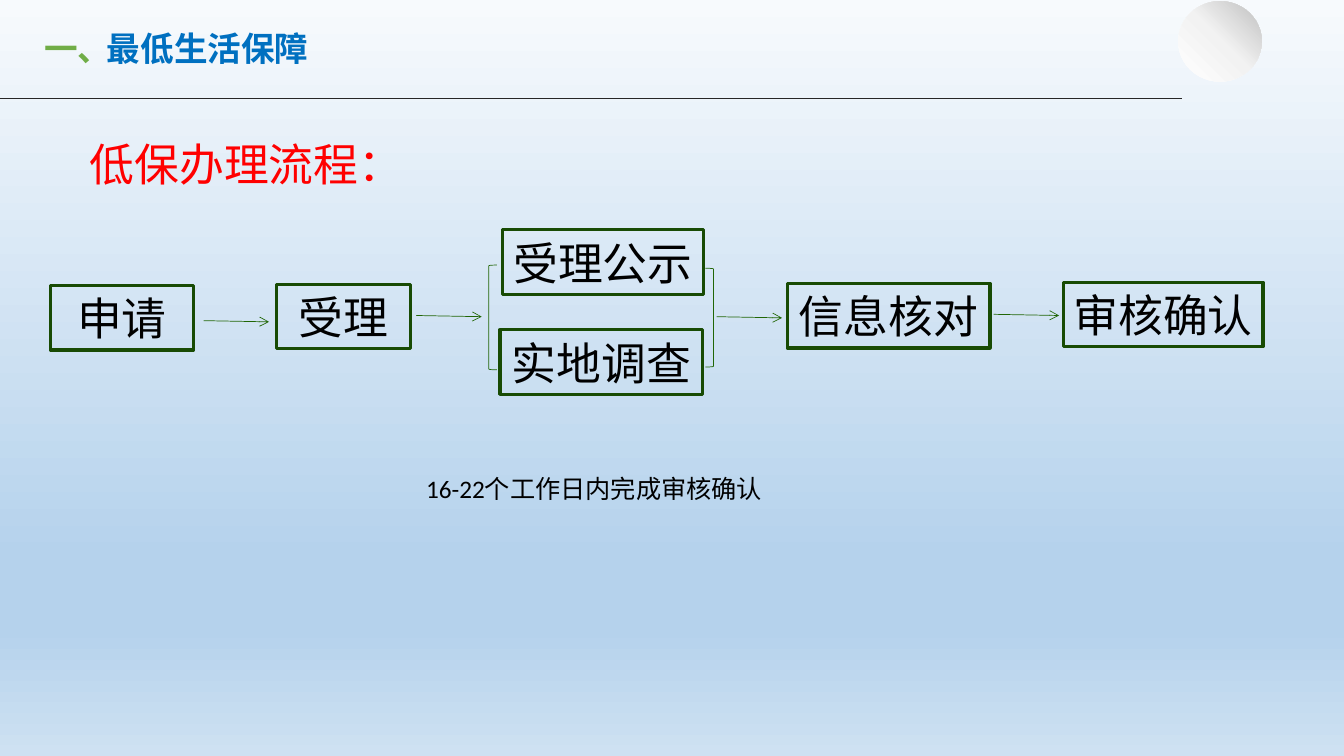
from lxml import etree
from pptx import Presentation
from pptx import util as u
from pptx.dml.color import RGBColor
from pptx.enum import shapes, text
from pptx.oxml import ns

BLUE = RGBColor(0x00, 0x70, 0xC0)
LEAF = RGBColor(0x70, 0xAD, 0x47)
RED = RGBColor(0xFF, 0x00, 0x00)
BLACK = RGBColor(0x00, 0x00, 0x00)
CHARCOAL = RGBColor(0x26, 0x26, 0x26)
FRAME_GREEN = RGBColor(0x18, 0x4B, 0x04)
ARROW_GREEN = RGBColor(0x21, 0x66, 0x06)
SKY = [(0, "F7FAFD"), (74, "B5D2EC"), (83, "B5D2EC"), (100, "CEE1F2")]
SILVER = [(0, "FFFFFF"), (51, "F2F2F2"), (100, "BFBFBF")]
CJK = "Noto Sans CJK SC"

TITLE = ("最低生活保障", (2.44, 0.58, 5.59, 1.27))
HEADER_FORMAT = {"size": u.Pt(24), "bold": True, "name": CJK}
STEP_FORMAT = {"size": u.Pt(32), "bold": False, "name": "Calibri"}
NOTE_FORMAT = {**STEP_FORMAT, "size": u.Pt(18)}
CAPTIONS = [
    ("一、", (0.86, 0.58, 2.21, 1.27), HEADER_FORMAT, LEAF, False),
    ("低保办理流程：", (2.01, 3.33, 8.18, 1.63), STEP_FORMAT, RED, True),
    ("16-22个工作日内完成审核确认", (10.49, 11.79, 13.94, 1.02), NOTE_FORMAT, BLACK, True),
]
STEP_HEIGHT = 1.63
STEPS = [
    ("申请", 1.27, 7.19, 3.61),
    ("受理", 6.96, 7.16, 3.38),
    ("受理公示", 12.67, 5.79, 5.05),
    ("实地调查", 12.6, 8.31, 5.11),
    ("信息核对", 19.84, 7.14, 5.11),
    ("审核确认", 26.8, 7.11, 5.03),
]
ARROW_RUN, ARROW_DROP = 1.65, 0.03
ARROW_STARTS = [(5.13, 8.08), (10.49, 7.95), (18.06, 7.98), (25.04, 7.92)]
BRACKETS = [
    (shapes.MSO_SHAPE.LEFT_BRACKET, (12.32, 6.68, 0.2, 2.64)),
    (shapes.MSO_SHAPE.RIGHT_BRACKET, (17.78, 6.76, 0.2, 2.49)),
]
RULE = (0, 2.49, 29.79, 2.49)
BALL = (29.69, 0.03, 2.11, 2.03)


def cm(values):
    return [u.Cm(value) for value in values]


def set_gradient(fill, stops, angle):
    fill.gradient()
    stop_list = fill.gradient_stops._gsLst
    for stop in list(stop_list):
        stop_list.remove(stop)
    for percent, colour in stops:
        stop = etree.SubElement(stop_list, ns.qn("a:gs"), pos=str(percent * 1000))
        etree.SubElement(stop, ns.qn("a:srgbClr"), val=colour)
    linear = stop_list.getparent().find(ns.qn("a:lin"))
    linear.set("ang", str(angle * 60000))
    linear.set("scaled", "0")


def write(holder, words, look, colour, align, wrap, anchor=text.MSO_ANCHOR.TOP):
    frame = holder.text_frame
    frame.word_wrap = wrap
    frame.auto_size = text.MSO_AUTO_SIZE.SHAPE_TO_FIT_TEXT
    frame.vertical_anchor = anchor
    paragraph = frame.paragraphs[0]
    paragraph.alignment = align
    run = paragraph.add_run()
    run.text = words
    run.font.color.rgb = colour
    for key, value in look.items():
        setattr(run.font, key, value)
    latin = run._r.get_or_add_rPr().find(ns.qn("a:latin"))
    east_asian = etree.Element(ns.qn("a:ea"), typeface=CJK)
    latin.addnext(east_asian)


def outline(line, colour, width):
    line.color.rgb = colour
    line.width = u.Pt(width)


def add_figure(slide, kind, place):
    figure = slide.shapes.add_shape(kind, *cm(place))
    figure.shadow.inherit = False
    figure.fill.background()
    return figure


def add_line(slide, ends, colour, arrow):
    connector = slide.shapes.add_connector(shapes.MSO_CONNECTOR.STRAIGHT, *cm(ends))
    outline(connector.line, colour, 0.5)
    if arrow:
        etree.SubElement(connector.line._get_or_add_ln(), ns.qn("a:tailEnd"), type="arrow")
    etree.SubElement(connector._element.spPr, ns.qn("a:effectLst"))


def main():
    deck = Presentation()
    deck.slide_width, deck.slide_height = cm((33.87, 19.05))
    slide = deck.slides.add_slide(deck.slide_layouts[5])
    set_gradient(slide.background.fill, SKY, 90)

    words, place = TITLE
    title = slide.shapes.title
    title.left, title.top, title.width, title.height = cm(place)
    write(title, words, HEADER_FORMAT, BLUE, text.PP_ALIGN.LEFT, False)

    add_line(slide, RULE, CHARCOAL, False)
    ball = add_figure(slide, shapes.MSO_SHAPE.OVAL, BALL)
    set_gradient(ball.fill, SILVER, 315)
    ball.line.fill.background()

    for words, place, look, colour, wrap in CAPTIONS:
        caption = slide.shapes.add_textbox(*cm(place))
        write(caption, words, look, colour, text.PP_ALIGN.LEFT, wrap)

    for words, left, top, width in STEPS:
        step = add_figure(slide, shapes.MSO_SHAPE.RECTANGLE, (left, top, width, STEP_HEIGHT))
        outline(step.line, FRAME_GREEN, 2.25)
        write(step, words, STEP_FORMAT, BLACK, text.PP_ALIGN.CENTER, True, text.MSO_ANCHOR.MIDDLE)
        step.text_frame.auto_size = text.MSO_AUTO_SIZE.NONE
        step.text_frame.word_wrap = False

    for x, y in ARROW_STARTS:
        add_line(slide, (x, y, x + ARROW_RUN, y + ARROW_DROP), ARROW_GREEN, True)

    for kind, place in BRACKETS:
        bracket = add_figure(slide, kind, place)
        outline(bracket.line, ARROW_GREEN, 0.5)

    deck.save("out.pptx")


if __name__ == "__main__":
    main()
